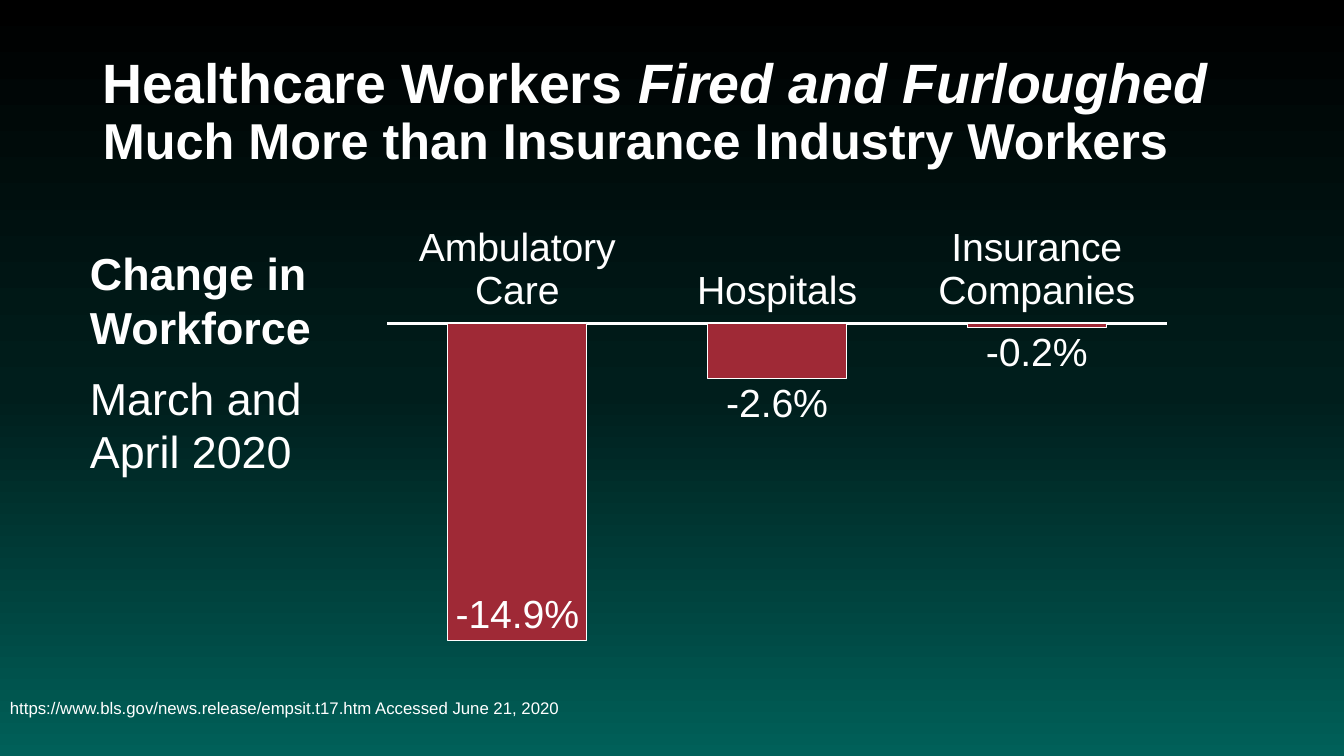
from copy import deepcopy

from lxml import etree
from pptx import Presentation
from pptx.chart.data import CategoryChartData
from pptx.dml.color import RGBColor
from pptx.enum.chart import XL_CHART_TYPE, XL_LABEL_POSITION, XL_TICK_LABEL_POSITION, XL_TICK_MARK
from pptx.enum.text import MSO_ANCHOR
from pptx.oxml.ns import qn
from pptx.util import Pt

COLUMNS = XL_CHART_TYPE.COLUMN_CLUSTERED
OUTSIDE, INSIDE = XL_LABEL_POSITION.OUTSIDE_END, XL_LABEL_POSITION.INSIDE_END
LABELS_HIGH = XL_TICK_LABEL_POSITION.HIGH
NO_TICKS = XL_TICK_MARK.NONE
TOP, MIDDLE = MSO_ANCHOR.TOP, MSO_ANCHOR.MIDDLE

THEME = {
    "font": "Arial",
    "text": RGBColor.from_string("FFFFFF"),
    "bar": RGBColor.from_string("9F2936"),
    "background": [(0, "000000"), (52, "001E1C"), (100, "006059")],
    "title": 39.6, "subtitle": 36, "caption": 32, "chart": 28, "source": 12,
}

# Each paragraph is a list of lines, each line a list of (text, size, style) runs.
TITLE = [[
    [("Healthcare Workers ", "title", {"bold": True}),
     ("Fired and Furloughed ", "title", {"bold": True, "italic": True})],
    [("Much More than Insurance Industry Workers", "subtitle", {"bold": True})],
]]
CAPTION = [
    [[("Change in Workforce", "caption", {"bold": True})]],
    [[("March and April 2020", "caption", {})]],
]
SOURCE = [[[("https://www.bls.gov/news.release/empsit.t17.htm Accessed June 21, 2020", "source", {})]]]

# Box in px (left, top, width, height), paragraphs, anchor, paragraph format
TEXTS = [
    ((93, 40, 1159, 146), TITLE, MIDDLE, {"line_spacing": 0.9}),
    ((80, 241, 281, 244), CAPTION, TOP, {"space_after": Pt(12)}),
    ((0, 663, 907, 93), SOURCE, MIDDLE, {"line_spacing": 0.9}),
]

WORKFORCE_CHANGE = {"Ambulatory Care": -0.149, "Hospitals": -0.026, "Insurance Companies": -0.002}
CHART_BOX = (372, 209, 810, 495)
PLOT_AREA = {"x": 0.019, "y": 0.231, "w": 0.962, "h": 0.689}

SLIDE_SIZE = (1344, 756)
EMU_PER_PX = 914400 / 100.8


def px(*lengths):
    return [round(length * EMU_PER_PX) for length in lengths]


def set_all(target, values):
    for name, value in values.items():
        setattr(target, name, value)


def style_font(font, size, **style):
    set_all(font, {"name": THEME["font"], "size": Pt(THEME[size]), "bold": False, **style})
    font.color.rgb = THEME["text"]


def paint_background(slide):
    fill = slide.background.fill
    fill.gradient()
    fill.gradient_angle = 270
    first_stop = next(slide.element.iter(qn("a:gs")))
    first_stop.addnext(deepcopy(first_stop))
    for stop, (percent, color) in zip(fill.gradient_stops, THEME["background"]):
        stop.position = percent / 100
        stop.color.rgb = RGBColor.from_string(color)


def add_text(slide, box, paragraphs, anchor, spacing):
    frame = slide.shapes.add_textbox(*px(*box)).text_frame
    set_all(frame, {"word_wrap": True, "vertical_anchor": anchor})
    for number, lines in enumerate(paragraphs):
        paragraph = frame.add_paragraph() if number else frame.paragraphs[0]
        set_all(paragraph, spacing)
        for line_number, runs in enumerate(lines):
            if line_number:
                paragraph.add_line_break()
            for text, size, style in runs:
                run = paragraph.add_run()
                run.text = text
                style_font(run.font, size, **style)


def fix_plot_area(chart):
    """Pin the inner plot area to fixed fractions of the chart."""
    plot_area = next(chart.element.iter(qn("c:plotArea")))
    for old in plot_area.findall(qn("c:layout")):
        plot_area.remove(old)
    layout = etree.Element(qn("c:layout"))
    manual = etree.SubElement(layout, qn("c:manualLayout"))
    settings = {"layoutTarget": "inner", "xMode": "edge", "yMode": "edge", **PLOT_AREA}
    for name, value in settings.items():
        etree.SubElement(manual, qn(f"c:{name}")).set("val", str(value))
    plot_area.insert(0, layout)


def add_workforce_chart(slide):
    data = CategoryChartData(number_format="0.0%")
    data.categories = list(WORKFORCE_CHANGE)
    data.add_series("Series 1", list(WORKFORCE_CHANGE.values()))
    chart = slide.shapes.add_chart(COLUMNS, *px(*CHART_BOX), data).chart
    set_all(chart, {"has_legend": False, "has_title": False})
    style_font(chart.font, "chart")
    fix_plot_area(chart)

    set_all(chart.value_axis, {"minimum_scale": -0.16, "maximum_scale": 0,
                               "has_major_gridlines": False, "visible": False})
    categories = chart.category_axis
    set_all(categories, {"tick_label_position": LABELS_HIGH,
                         "major_tick_mark": NO_TICKS, "minor_tick_mark": NO_TICKS})
    style_font(categories.tick_labels.font, "chart")

    plot = chart.plots[0]
    set_all(plot, {"gap_width": 87, "overlap": -27, "vary_by_categories": False})
    bars = plot.series[0]
    bars.invert_if_negative = False
    bars.format.fill.solid()
    bars.format.fill.fore_color.rgb = THEME["bar"]
    for line, width in ((categories.format.line, 2), (bars.format.line, 0.75)):
        line.color.rgb = THEME["text"]
        line.width = Pt(width)

    labels = bars.data_labels
    set_all(labels, {"show_value": True, "position": OUTSIDE,
                     "number_format": "0.0%", "number_format_is_linked": False})
    style_font(labels.font, "chart")
    longest_bar_label = bars.points[0].data_label
    style_font(longest_bar_label.font, "chart")
    longest_bar_label.position = INSIDE


def main():
    deck = Presentation()
    deck.slide_width, deck.slide_height = px(*SLIDE_SIZE)
    slide = deck.slides.add_slide(deck.slide_layouts[6])
    paint_background(slide)
    add_workforce_chart(slide)
    for text in TEXTS:
        add_text(slide, *text)
    deck.save("out.pptx")


if __name__ == "__main__":
    main()
